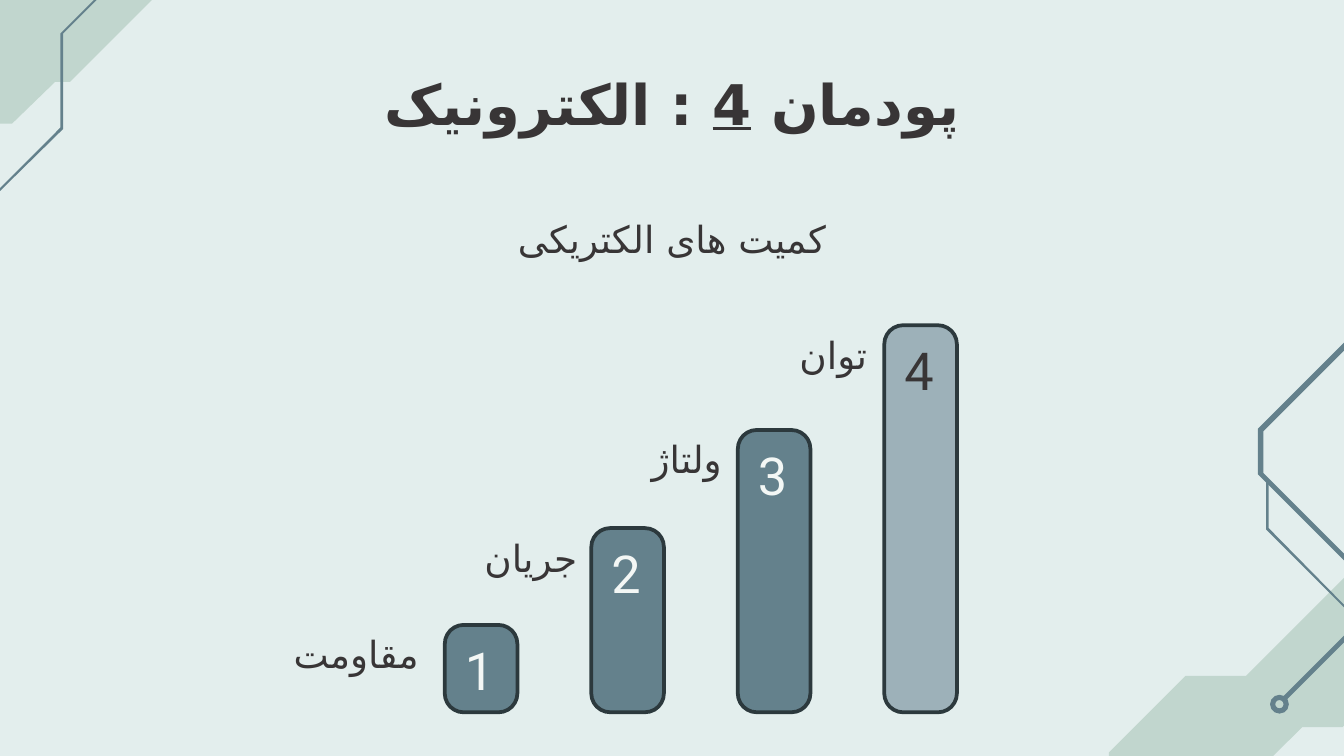
import pptx
import pptx.util
import pptx.dml.color
import pptx.enum.shapes
import pptx.enum.text
import pptx.oxml.ns

Inches, Pt = pptx.util.Inches, pptx.util.Pt
SHAPE = pptx.enum.shapes.MSO_SHAPE
ALIGN = pptx.enum.text.PP_ALIGN

THEME = {
    "font": "Roboto", "script": "DejaVu Sans",
    "back": "E3EEED", "mint": "C1D6CE", "teal": "64818C", "pale": "9DB1B9",
    "edge": "2C393D", "dark": "383536", "light": "F3F7F5",
    "title": 30, "body": 20, "digit": 28,
}
WIDE = 10
HIGH = WIDE * 9 / 16

# Title runs: text, underlined
TITLE = [("پودمان ", False), ("4", True), (" : الکترونیک", False)]
TOPIC = "کمیت های الکتریکی"

# Label, bar height, distance from bar's left edge to label centre, fill, digit colour
STEPS = [
    ("مقاومت", 0.65, 0.66, "teal", "light"),
    ("جریان", 1.37, 0.45, "teal", "light"),
    ("ولتاژ", 2.10, 0.38, "teal", "light"),
    ("توان", 2.88, 0.38, "pale", "dark"),
]
FIRST, PITCH, BASE, BAR = 3.31, 1.09, 5.30, 0.54
ROW, LABEL = 0.44, 2.4

# Corner bands and circuit traces: fill and corners in hundredths of an inch
TRACES = [
    ("mint", [(119, -72), (65, -18), (16, -18), (-94, 92), (9, 92), (41, 61),
              (52, 61), (185, -72)]),
    ("teal", [(121, -51), (45, 25), (45, 95), (-12, 152), (-11, 153), (47, 96),
              (47, 25), (122, -50)]),
    ("mint", [(1027, 403), (927, 503), (882, 503), (825, 560), (825, 586),
              (789, 622), (887, 622), (969, 541), (999, 541), (1058, 482),
              (1058, 466), (1121, 403)]),
    ("teal", [(1218, 115), (1121, 212), (1043, 212), (936, 319), (936, 353),
              (1001, 418), (1001, 472), (953, 520), (956, 522), (1005, 473),
              (1005, 417), (940, 352), (940, 321), (1045, 216), (1122, 216),
              (1221, 118)]),
    ("teal", [(942, 357), (942, 394), (1002, 454), (1003, 453), (944, 393),
              (944, 357)]),
]
NODE = (9.45, 5.17, 0.14, 0.14)


def tint(name):
    return pptx.dml.color.RGBColor.from_string(THEME[name])


def paint(shape, fill, line=None):
    shape.shadow.inherit = False
    shape.fill.solid()
    shape.fill.fore_color.rgb = tint(fill)
    if line:
        shape.line.color.rgb = tint(line)
        shape.line.width = Pt(2)
    else:
        shape.line.fill.background()


def write(slide, place, runs, size, color="dark", align=ALIGN.CENTER,
          bold=False, inset=0.05):
    box = slide.shapes.add_textbox(*map(Inches, place))
    frame = box.text_frame
    frame.word_wrap = True
    frame.margin_top = frame.margin_bottom = Inches(inset)
    para = frame.paragraphs[0]
    para.alignment = align
    for text, under in runs:
        run = para.add_run()
        run.text = text
        font = run.font
        font.name, font.size, font.bold = THEME["font"], Pt(THEME[size]), bold
        font.color.rgb = tint(color)
        if under:
            font.underline = True
        # Persian letters take the complex-script face
        face = run._r.get_or_add_rPr().makeelement(pptx.oxml.ns.qn("a:cs"), {})
        face.set("typeface", THEME["script"])
        run._r.rPr.append(face)


def decor(slide):
    for fill, points in TRACES:
        pen = slide.shapes.build_freeform(*points[0], scale=Inches(0.01))
        pen.add_line_segments(points[1:], close=True)
        paint(pen.convert_to_shape(), fill)
    node = slide.shapes.add_shape(SHAPE.DONUT, *map(Inches, NODE))
    node.adjustments[0] = 0.28
    paint(node, "teal")


def stairs(slide):
    for i, (name, tall, gap, fill, ink) in enumerate(STEPS):
        left, top = FIRST + i * PITCH, BASE - tall
        bar = slide.shapes.add_shape(
            SHAPE.ROUNDED_RECTANGLE, *map(Inches, (left, top, BAR, tall)))
        bar.adjustments[0] = 0.26
        paint(bar, fill, "edge")
        write(slide, (left + 0.05, top + 0.05, 0.45, 0.57),
              [(str(i + 1), False)], "digit", ink, ALIGN.LEFT)
        write(slide, (left - gap - LABEL / 2, top, LABEL, ROW),
              [(name, False)], "body")


def main():
    deck = pptx.Presentation()
    deck.slide_width, deck.slide_height = Inches(WIDE), Inches(HIGH)
    slide = deck.slides.add_slide(deck.slide_layouts[6])
    slide.background.fill.solid()
    slide.background.fill.fore_color.rgb = tint("back")
    decor(slide)
    for width, top, high, runs, size, bold, inset in [
        (8.43, 0.42, 0.65, TITLE, "title", True, 0.1),
        (3.82, 1.56, ROW, [(TOPIC, False)], "body", False, 0.05),
    ]:
        write(slide, ((WIDE - width) / 2, top, width, high), runs, size,
              bold=bold, inset=inset)
    stairs(slide)
    deck.save("out.pptx")


if __name__ == "__main__":
    main()
